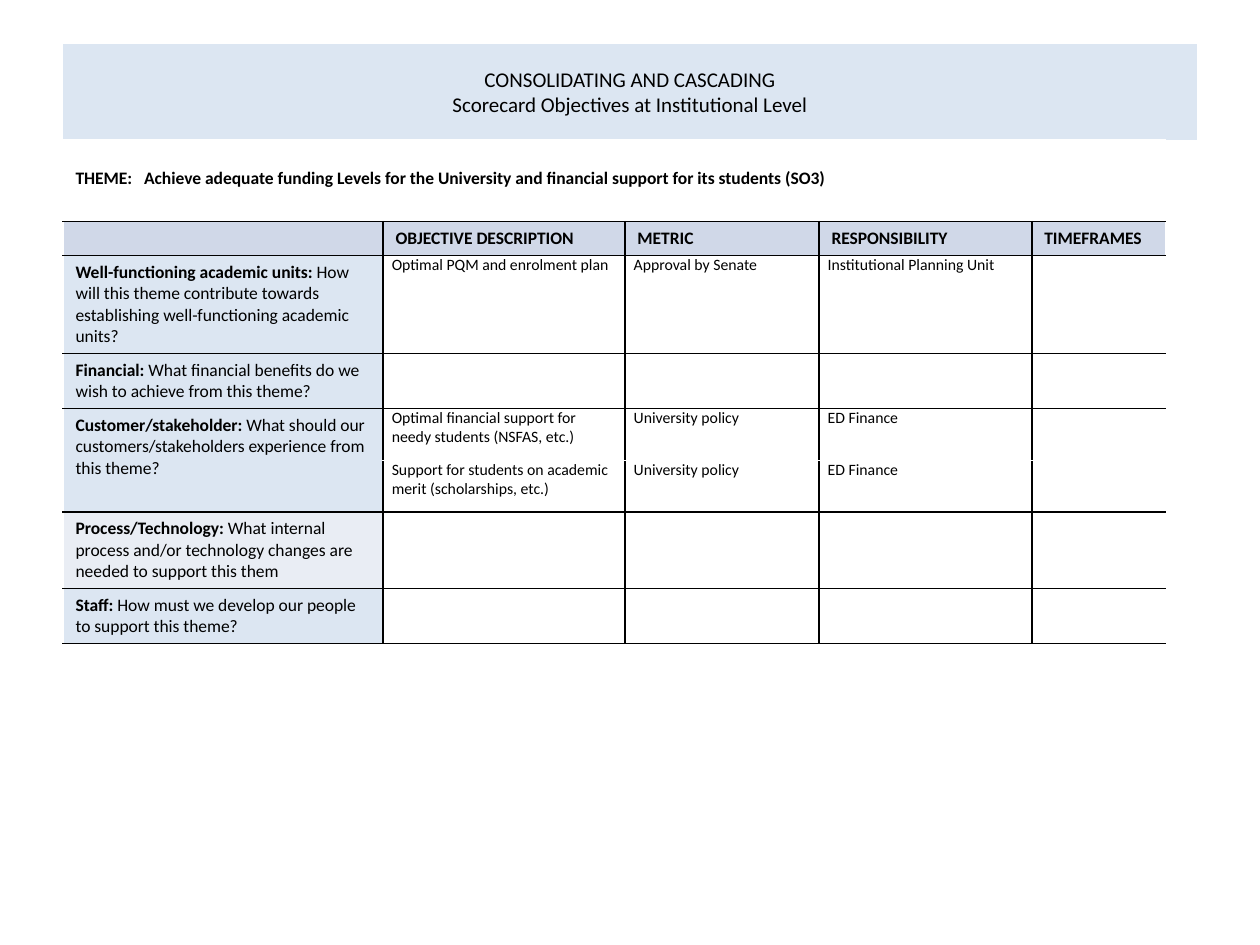
from dataclasses import dataclass

from lxml import etree
from pptx import Presentation
from pptx.dml.color import RGBColor
from pptx.enum import text
from pptx.oxml import ns
from pptx.util import Inches, Pt

BLACK = RGBColor(0x00, 0x00, 0x00)
WHITE = RGBColor(0xFF, 0xFF, 0xFF)
HEADER_BLUE = RGBColor(0xD0, 0xD8, 0xE8)
PALE_BLUE = RGBColor(0xDC, 0xE6, 0xF2)
PALE_GREY = RGBColor(0xE9, 0xED, 0xF4)

TITLE = "CONSOLIDATING AND CASCADING\vScorecard Objectives at Institutional Level"
THEME = ("THEME:   Achieve adequate funding Levels for the University "
         "and financial support for its students (SO3)")
HEADERS = ["", "OBJECTIVE DESCRIPTION", "METRIC", "RESPONSIBILITY", "TIMEFRAMES"]
PERSPECTIVES = {
    2: ("Well-functioning academic units: ",
        "How will this theme contribute towards establishing "
        "well-functioning academic units?"),
    3: ("Financial: ", "What financial benefits do we wish to achieve from this theme?"),
    4: ("Customer/stakeholder: ",
        "What should our customers/stakeholders experience from this theme?"),
    6: ("Process/Technology: ",
        "What internal process and/or technology changes are needed to support this them"),
    7: ("Staff: ", "How must we develop our people to support this theme?"),
}
OBJECTIVES = {
    2: ("Optimal PQM and enrolment plan", "Approval by Senate",
        "Institutional Planning Unit"),
    4: ("Optimal financial support for needy students (NSFAS, etc.)",
        "University policy", "ED Finance"),
    5: ("Support for students on academic merit (scholarships, etc.)",
        "University policy", "ED Finance"),
}
COLUMN_WIDTHS = [2.54, 1.92, 1.54, 1.69, 1.06]
ROW_HEIGHTS = [0.65, 0.27, 0.77, 0.44, 0.41, 0.41, 0.6, 0.44]


@dataclass
class ScorecardSlide:
    slide: object
    font: str = "Calibri"
    title_size: float = 12
    label_size: float = 10
    detail_size: float = 9

    def format_run(self, run, size, bold=False):
        run.font.name = self.font
        run.font.size = Pt(size)
        run.font.bold = bold
        run.font.color.rgb = BLACK

    def title(self, words, left, top, width, height):
        shape = self.slide.shapes.title
        shape.left, shape.top = Inches(left), Inches(top)
        shape.width, shape.height = Inches(width), Inches(height)
        shape.fill.solid()
        shape.fill.fore_color.rgb = PALE_BLUE
        frame = shape.text_frame
        frame.text = words
        frame.auto_size = text.MSO_AUTO_SIZE.NONE
        frame.vertical_anchor = text.MSO_ANCHOR.MIDDLE
        paragraph = frame.paragraphs[0]
        paragraph.alignment = text.PP_ALIGN.CENTER
        for run in paragraph.runs:
            self.format_run(run, self.title_size)

    def table(self, left, top, widths, heights):
        frame = self.slide.shapes.add_table(
            len(heights), len(widths), Inches(left), Inches(top),
            Inches(sum(widths)), Inches(sum(heights)))
        table = frame.table
        table.first_row = False
        table.horz_banding = False
        for column, width in zip(table.columns, widths):
            column.width = Inches(width)
        for row, height in zip(table.rows, heights):
            row.height = Inches(height)
        return table

    def borders(self, cell, colours):
        properties = cell._tc.get_or_add_tcPr()
        for side, colour in zip("LRTB", colours):
            line = etree.SubElement(properties, ns.qn(f"a:ln{side}"), w=str(Pt(1)))
            fill = etree.SubElement(line, ns.qn("a:solidFill"))
            etree.SubElement(fill, ns.qn("a:srgbClr"), val=str(colour))

    def fill(self, cell, colour):
        if colour is None:
            cell.fill.background()
        else:
            cell.fill.solid()
            cell.fill.fore_color.rgb = colour

    def label(self, cell, bold_words, plain_words=""):
        paragraph = cell.text_frame.paragraphs[0]
        for words, bold in ((bold_words, True), (plain_words, False)):
            if words:
                run = paragraph.add_run()
                run.text = words
                self.format_run(run, self.label_size, bold)
        if not bold_words:
            etree.SubElement(paragraph._p, ns.qn("a:endParaRPr"),
                             sz=str(self.label_size * 100))

    def detail(self, cell, words):
        cell.margin_left = cell.margin_right = Inches(0.07)
        cell.margin_top = cell.margin_bottom = 0
        cell.text_frame.text = words
        self.format_run(cell.text_frame.paragraphs[0].runs[0], self.detail_size)


def border_colours(row, column):
    open_top = row == 0 or (row == 5 and column > 0)
    open_bottom = row == 4 and column > 0
    is_open = (row == 0 or column == 0,
               row == 0 or column == len(COLUMN_WIDTHS) - 1,
               open_top, open_bottom)
    return [WHITE if side else BLACK for side in is_open]


def fill_colour(row, column):
    if row == 1:
        return HEADER_BLUE
    if row == 0 or column > 0:
        return None
    return PALE_GREY if row == 6 else PALE_BLUE


def main():
    presentation = Presentation()
    presentation.slide_width = Inches(10)
    presentation.slide_height = Inches(7.5)
    slide = presentation.slides.add_slide(presentation.slide_layouts[5])
    scorecard = ScorecardSlide(slide)
    scorecard.title(TITLE, 0.5, 0.35, 9, 0.76)

    table = scorecard.table(0.5, 1.11, COLUMN_WIDTHS, ROW_HEIGHTS)
    for row in range(len(ROW_HEIGHTS)):
        for column in range(len(COLUMN_WIDTHS)):
            cell = table.cell(row, column)
            scorecard.borders(cell, border_colours(row, column))
            scorecard.fill(cell, fill_colour(row, column))
    table.cell(0, 0).merge(table.cell(0, len(COLUMN_WIDTHS) - 1))
    table.cell(4, 0).merge(table.cell(5, 0))

    theme_cell = table.cell(0, 0)
    theme_cell.margin_top = Inches(0.22)
    scorecard.label(theme_cell, THEME)
    for column, header in enumerate(HEADERS):
        scorecard.label(table.cell(1, column), header)
    for row, (name, question) in PERSPECTIVES.items():
        scorecard.label(table.cell(row, 0), name, question)
    for row, details in OBJECTIVES.items():
        for column, words in enumerate(details, start=1):
            scorecard.detail(table.cell(row, column), words)

    presentation.save("out.pptx")


if __name__ == "__main__":
    main()
